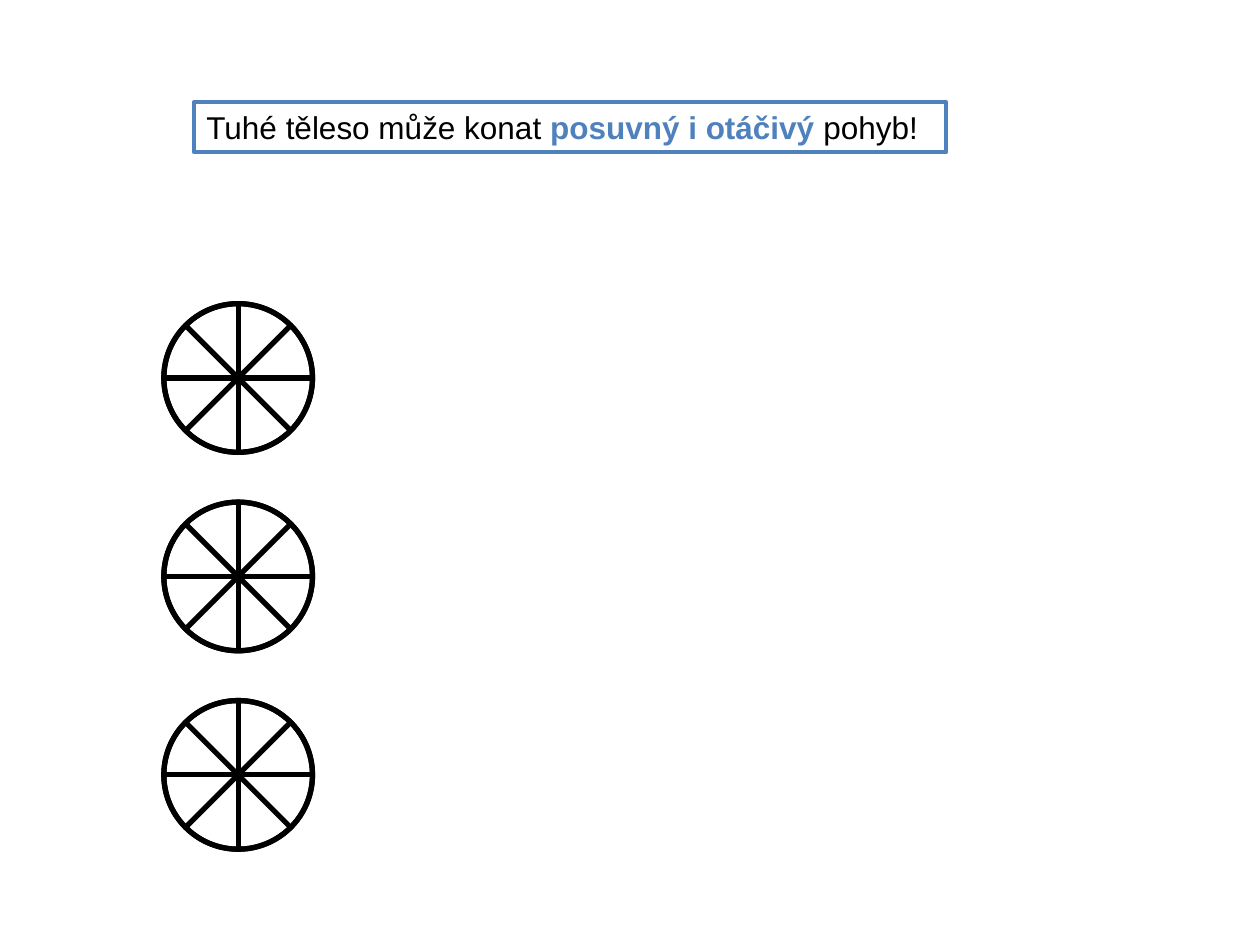
"""Build a slide on rigid-body motion with a framed statement and three wheels."""
from pptx import Presentation, util as u
from pptx.dml import color
from pptx.enum import shapes, text

COLORS = {"ink": "000000", "accent": "4F81BD"}
WIDTH, HEIGHT = 10, 7.5


def add_run(paragraph, content, *, size=18, shade="ink", bold=False, font="Arial"):
    run = paragraph.add_run()
    run.text = content
    run.font.name = font
    run.font.size = u.Pt(size)
    run.font.bold = bold
    run.font.color.rgb = color.RGBColor.from_string(COLORS[shade])


class SlideBuilder:
    def __init__(self, presentation):
        self.slide = presentation.slides.add_slide(presentation.slide_layouts[6])

    def outline(self, shape, shade, weight):
        shape.line.color.rgb = color.RGBColor.from_string(COLORS[shade])
        shape.line.width = u.Pt(weight)

    def statement(self, left, top, width, height, parts):
        box = self.slide.shapes.add_textbox(
            u.Inches(left * WIDTH), u.Inches(top * HEIGHT),
            u.Inches(width * WIDTH), u.Inches(height * HEIGHT))
        self.outline(box, "accent", 2.25)
        frame = box.text_frame
        frame.word_wrap = True
        frame.auto_size = text.MSO_AUTO_SIZE.SHAPE_TO_FIT_TEXT
        for content, style in parts:
            add_run(frame.paragraphs[0], content, **style)

    def wheel(self, left, top, diameter):
        group = self.slide.shapes.add_group_shape()
        size = u.Inches(diameter * WIDTH)
        for angle in (0, 45):
            spokes = group.shapes.add_shape(
                shapes.MSO_SHAPE.FLOWCHART_SUMMING_JUNCTION,
                u.Inches(left * WIDTH), u.Inches(top * HEIGHT), size, size)
            spokes.rotation = angle
            spokes.shadow.inherit = False
            spokes.fill.background()
            self.outline(spokes, "ink", 3)


def main():
    presentation = Presentation()
    presentation.slide_width = u.Inches(WIDTH)
    presentation.slide_height = u.Inches(HEIGHT)
    builder = SlideBuilder(presentation)
    builder.statement(1.54 / WIDTH, 0.81 / HEIGHT, 5.97 / WIDTH, 0.4 / HEIGHT, [
        ("Tuhé těleso může konat ", {}),
        ("posuvný i otáčivý ", {"shade": "accent", "bold": True}),
        ("pohyb!", {}),
    ])
    first_top, pitch = 2.41 / HEIGHT, 0.21
    for row in range(3):
        builder.wheel(0.13, first_top + row * pitch, 1.18 / WIDTH)
    presentation.save("out.pptx")


if __name__ == "__main__":
    main()
